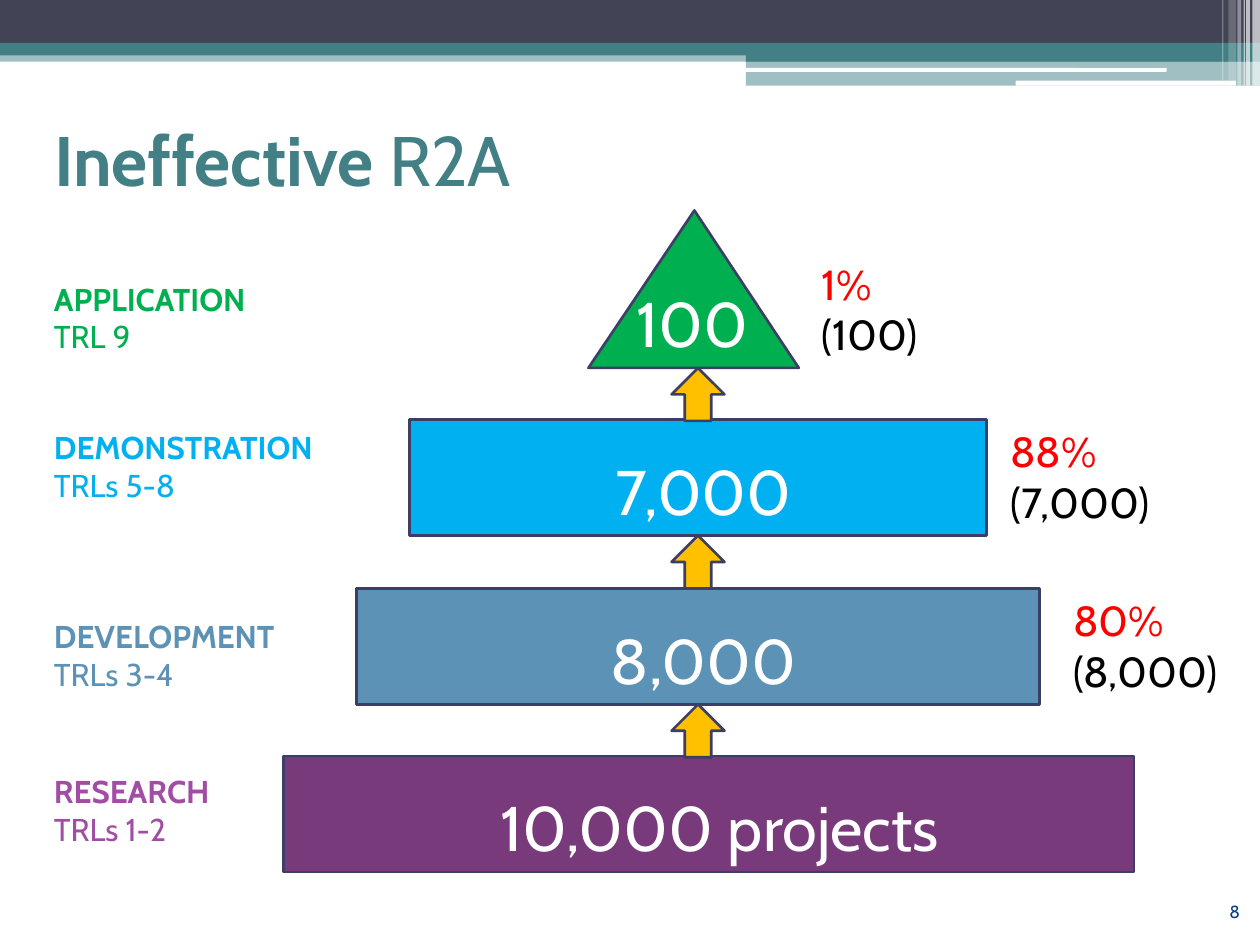
from pptx import Presentation
from pptx.dml.color import RGBColor
from pptx.enum.shapes import MSO_SHAPE
from pptx.enum.text import MSO_ANCHOR, PP_ALIGN
from pptx.oxml.ns import qn
from pptx.util import Pt
from lxml import etree

RECT, ROUND = MSO_SHAPE.RECTANGLE, MSO_SHAPE.ROUNDED_RECTANGLE
TRIANGLE, UP_ARROW = MSO_SHAPE.ISOSCELES_TRIANGLE, MSO_SHAPE.UP_ARROW
LEFT, CENTER, RIGHT = PP_ALIGN.LEFT, PP_ALIGN.CENTER, PP_ALIGN.RIGHT
MIDDLE = MSO_ANCHOR.MIDDLE

PX = 9144  # EMU per px, 100 px to the inch
SLIDE_W, SLIDE_H = 1000, 750

THEME = {
    "font": "Cabin", "outline": "3D3E66", "outline_pt": 1.5,
    "dark": "424456", "teal": "438086", "white": "FFFFFF", "black": "000000",
    "green": "00B050", "sky": "00B0F0", "steel": "5C92B5",
    "purple": "783A7A", "violet": "A04DA3", "amber": "FFC000",
    "red": "FF0000", "navy": "073E87",
    "title_pt": 40, "count_pt": 36, "rate_pt": 24, "label_pt": 18, "page_pt": 10,
}

# Content: title runs as (text, bold)
TITLE = [("Ineffective", True), (" R2A", False)]
PAGE_NUMBER = "8"

# Stages from top to bottom; boxes are (left, top, width, height),
# label_top and rate_at place the texts beside each level
STAGES = [
    dict(name="APPLICATION", levels="TRL 9", label_color="green", label_top=217,
         kind=TRIANGLE, fill="green", box=(467, 167, 167, 125),
         count="100", count_box=(458, 183), rate=("1%", "(100)"), rate_at=(642, 200, 158)),
    dict(name="DEMONSTRATION", levels="TRLs 5-8", label_color="sky", label_top=335,
         kind=RECT, fill="sky", box=(325, 333, 458, 92),
         count="7,000", count_box=(350, 417), rate=("88%", "(7,000)"), rate_at=(792, 333, 225)),
    dict(name="DEVELOPMENT", levels="TRLs 3-4", label_color="steel", label_top=485,
         kind=RECT, fill="steel", box=(283, 467, 542, 92),
         count="8,000", count_box=(350, 417), rate=("80%", "(8,000)"), rate_at=(842, 467, 250)),
    dict(name="RESEARCH", levels="TRLs 1-2", label_color="violet", label_top=608,
         kind=RECT, fill="purple", box=(225, 600, 675, 92),
         count="10,000 projects", count_box=(300, 542), rate=None, rate_at=None),
]

# Header bands and stripes: kind, box, colour, opacity in percent
HEADER = [
    (RECT, (0, 40, SLIDE_W, 9), "teal", 50),
    (RECT, (0, 0, SLIDE_W, 34), "dark", 100),
    (RECT, (0, 34, SLIDE_W, 10), "teal", 100),
    (RECT, (592, 39, 408, 10), "teal", 100),
    (RECT, (592, 48, 408, 20), "teal", 50),
    (ROUND, (591, 54, 335, 3), "white", 100),
    (ROUND, (806, 64, 175, 4), "white", 100),
]
# Vertical stripes: left, width, height, opacity
STRIPES = [(994, 6, 68, 65), (989, 3, 68, 65), (987, 1, 68, 60),
           (982, 3, 68, 40), (975, 6, 64, 20), (970, 1, 64, 30)]

LABEL_LEFT, LABEL_W, LABEL_H = 33, 300, 71
COUNT_H, RATE_H = 71, 91
ARROW_LEFT, ARROW_SIZE = 533, 42


def emu(box):
    return [v * PX for v in box]


def color(key):
    return RGBColor.from_string(THEME[key])


def add_block(slide, kind, box, fill, opacity=100, outlined=False):
    block = slide.shapes.add_shape(kind, *emu(box))
    block.shadow.inherit = False
    block.fill.solid()
    block.fill.fore_color.rgb = color(fill)
    if opacity < 100:
        tint = block.fill._xPr.find(qn("a:solidFill"))[0]
        etree.SubElement(tint, qn("a:alpha")).set("val", str(opacity * 1000))
    if outlined:
        block.line.color.rgb = color("outline")
        block.line.width = Pt(THEME["outline_pt"])
    else:
        block.line.fill.background()
    return block


def add_run(paragraph, text, size, tone, bold=False):
    run = paragraph.add_run()
    run.text = text
    run.font.name = THEME["font"]
    run.font.size = Pt(THEME[size])
    run.font.bold = bold
    run.font.color.rgb = color(tone)


def add_text(slide, box, lines, size, align=LEFT):
    """Each line is (text, colour, bold)."""
    frame = slide.shapes.add_textbox(*emu(box)).text_frame
    frame.word_wrap = True
    for i, (text, tone, bold) in enumerate(lines):
        paragraph = frame.add_paragraph() if i else frame.paragraphs[0]
        paragraph.alignment = align
        add_run(paragraph, text, size, tone, bold)


def main():
    deck = Presentation()
    deck.slide_width, deck.slide_height = emu((SLIDE_W, SLIDE_H))
    slide = deck.slides.add_slide(deck.slide_layouts[5])

    # Header
    for band in HEADER:
        add_block(slide, *band)
    for left, width, height, opacity in STRIPES:
        add_block(slide, RECT, (left, 0, width, height), "white", opacity)

    # Title
    title = slide.shapes.title
    title.left, title.top, title.width, title.height = emu((33, 67, 900, 117))
    title.text_frame.vertical_anchor = MIDDLE
    heading = title.text_frame.paragraphs[0]
    heading.alignment = LEFT
    for text, bold in TITLE:
        add_run(heading, text, "title_pt", "teal", bold)

    # Pyramid levels with their counts, rates and labels
    for stage in STAGES:
        level = add_block(slide, stage["kind"], stage["box"], stage["fill"], outlined=True)
        if stage["kind"] == TRIANGLE:
            level.adjustments[0] = 0.504
        bottom = stage["box"][1] + stage["box"][3]
        count_left, count_w = stage["count_box"]
        add_text(slide, (count_left, bottom - COUNT_H, count_w, COUNT_H),
                 [(stage["count"], "white", False)], "count_pt", CENTER)
        add_text(slide, (LABEL_LEFT, stage["label_top"], LABEL_W, LABEL_H),
                 [(stage["name"], stage["label_color"], True),
                  (stage["levels"], stage["label_color"], False)], "label_pt")
        if stage["rate"]:
            share, total = stage["rate"]
            add_text(slide, (*stage["rate_at"], RATE_H),
                     [(share, "red", False), (total, "black", False)], "rate_pt")

    # Arrows fill the gaps between levels
    for stage in STAGES[:-1]:
        bottom = stage["box"][1] + stage["box"][3]
        add_block(slide, UP_ARROW, (ARROW_LEFT, bottom, ARROW_SIZE, ARROW_SIZE),
                  "amber", outlined=True)

    # Page number
    add_text(slide, (867, 710, 127, 40), [(PAGE_NUMBER, "navy", False)], "page_pt", RIGHT)

    deck.save("out.pptx")


if __name__ == "__main__":
    main()
